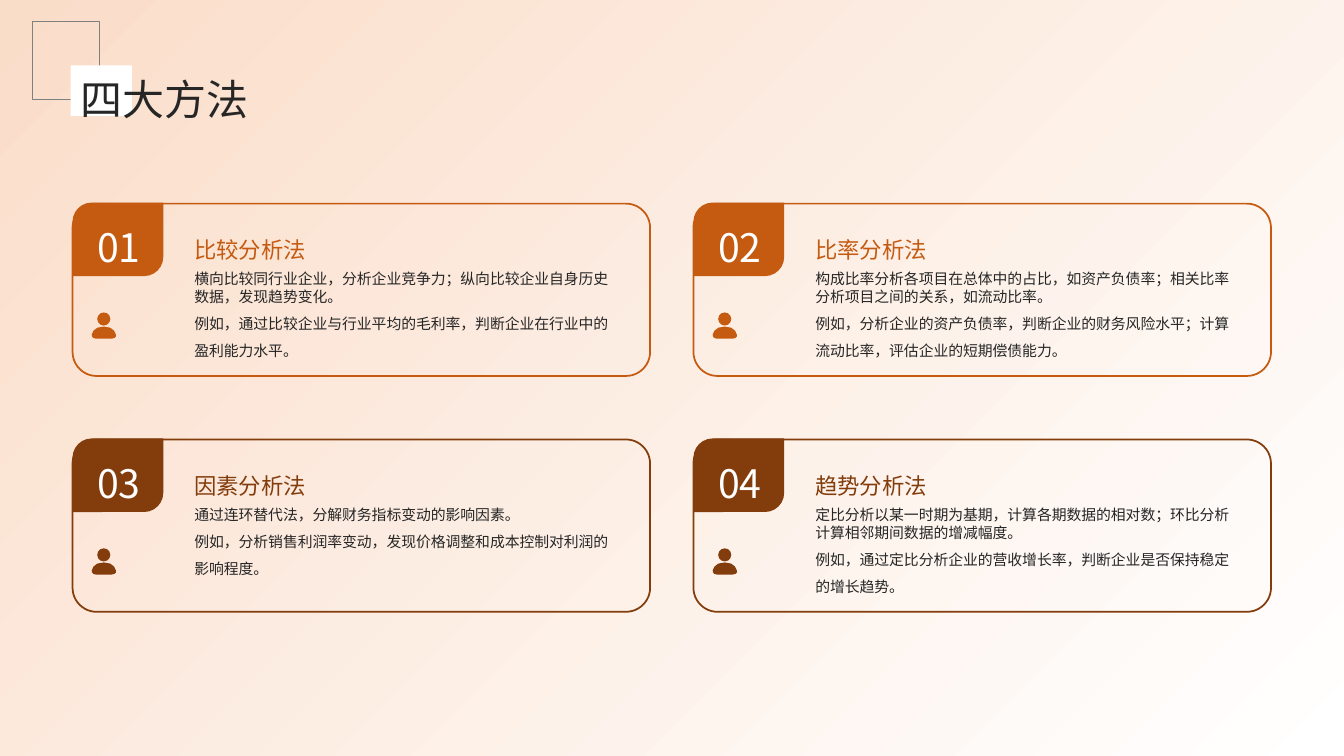
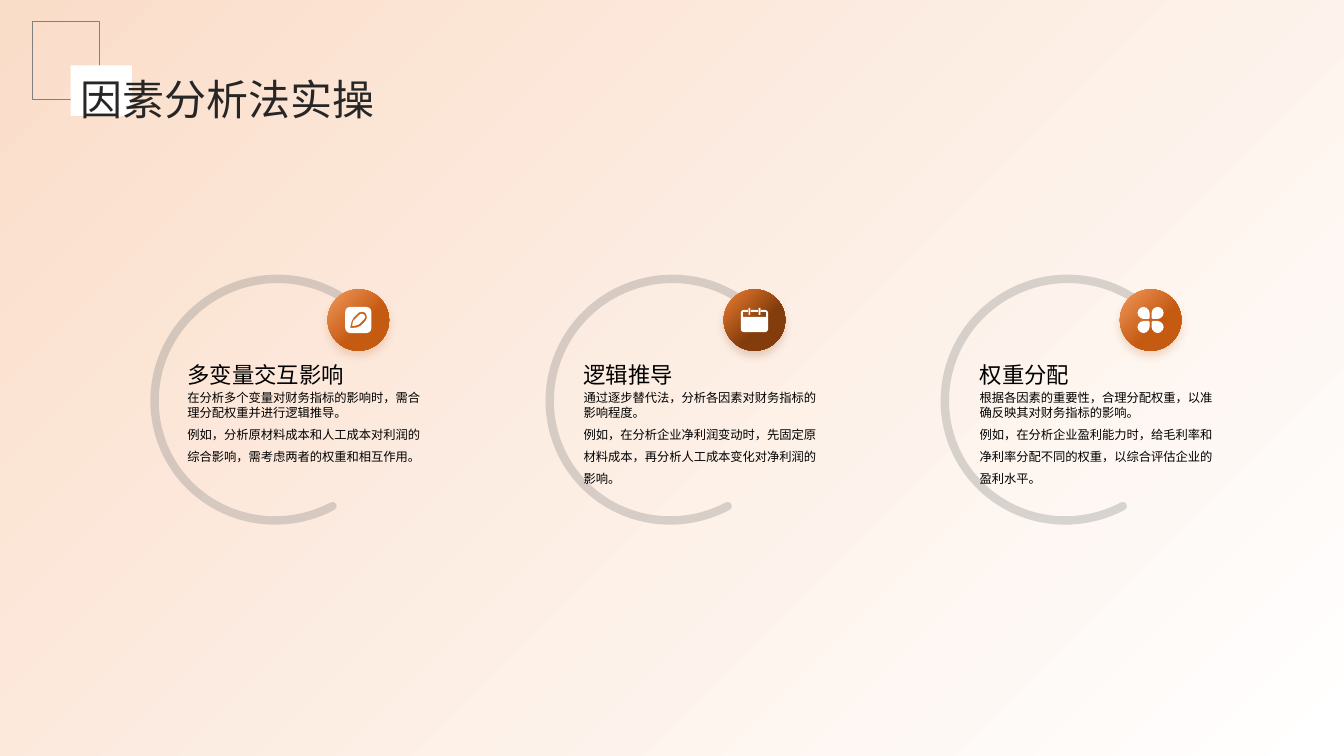
"""Build two slides on financial analysis methods: four method cards and three practice steps."""
from lxml.etree import SubElement
from pptx import Presentation
from pptx.dml.color import RGBColor
from pptx.enum.shapes import MSO_SHAPE
from pptx.enum.text import MSO_ANCHOR, MSO_AUTO_SIZE, PP_ALIGN
from pptx.oxml.ns import qn
from pptx.util import Pt

METHODS_TITLE = "四大方法"
METHODS = [
    ("比较分析法",
     "横向比较同行业企业，分析企业竞争力；纵向比较企业自身历史数据，发现趋势变化。",
     "例如，通过比较企业与行业平均的毛利率，判断企业在行业中的盈利能力水平。"),
    ("比率分析法",
     "构成比率分析各项目在总体中的占比，如资产负债率；相关比率分析项目之间的关系，如流动比率。",
     "例如，分析企业的资产负债率，判断企业的财务风险水平；计算流动比率，评估企业的短期偿债能力。"),
    ("因素分析法",
     "通过连环替代法，分解财务指标变动的影响因素。",
     "例如，分析销售利润率变动，发现价格调整和成本控制对利润的影响程度。"),
    ("趋势分析法",
     "定比分析以某一时期为基期，计算各期数据的相对数；环比分析计算相邻期间数据的增减幅度。",
     "例如，通过定比分析企业的营收增长率，判断企业是否保持稳定的增长趋势。"),
]
PRACTICE_TITLE = "因素分析法实操"
PRACTICE = [
    ("多变量交互影响", "pen", "orange",
     "在分析多个变量对财务指标的影响时，需合理分配权重并进行逻辑推导。",
     "例如，分析原材料成本和人工成本对利润的综合影响，需考虑两者的权重和相互作用。"),
    ("逻辑推导", "calendar", "brown",
     "通过逐步替代法，分析各因素对财务指标的影响程度。",
     "例如，在分析企业净利润变动时，先固定原材料成本，再分析人工成本变化对净利润的影响。"),
    ("权重分配", "clover", "orange",
     "根据各因素的重要性，合理分配权重，以准确反映其对财务指标的影响。",
     "例如，在分析企业盈利能力时，给毛利率和净利率分配不同的权重，以综合评估企业的盈利水平。"),
]

THEME = {
    "font": "Noto Sans CJK SC",
    "white": "FFFFFF", "peach": "FADDC9", "ink": "262626", "black": "000000", "gray": "808080",
    "orange": "C55A11", "brown": "833C0B", "orange_glow": "F1985C", "brown_glow": "EE7F33",
    "title": 30, "number": 28, "heading": 16, "card_body": 10.6, "step_body": 8.8,
}
PX = 9144
WIDTH, HEIGHT = 4000 / 3, 750
BODY_SPACING = (1.0, 1.5)
NO_INSETS = {"margin_left": 0, "margin_top": 0, "margin_right": 0, "margin_bottom": 0}


def px(length):
    return round(length * PX)


def color(name):
    return RGBColor.from_string(THEME[name])


def apply(target, values):
    for name, value in values.items():
        setattr(target, name, value)


def square(left, top, right, bottom):
    return [(left, top), (right, top), (right, bottom), (left, bottom)]


def rounded(left, top, right, bottom, radius):
    k = radius * 0.45
    return [(left + radius, top), (right - radius, top),
            (right - k, top, right, top + k, right, top + radius), (right, bottom - radius),
            (right, bottom - k, right - k, bottom, right - radius, bottom), (left + radius, bottom),
            (left + k, bottom, left, bottom - k, left, bottom - radius), (left, top + radius),
            (left, top + k, left + k, top, left + radius, top)]


def mirrored(outline, flip_x, flip_y, size=26):
    flips = (flip_x, flip_y)
    return [tuple(size - v if flips[i % 2] else v for i, v in enumerate(segment))
            for segment in outline]


PETAL = [(11, 12), (6, 12), (3, 12, 0, 9, 0, 6), (0, 3, 3, 0, 6, 0), (9, 0, 12, 3, 12, 6),
         (12, 11)]
ICONS = {
    "person": ((24, 26), [
        [(12, 14), (20, 14, 23, 18, 24, 22), (25, 24, 23, 26, 20, 26), (4, 26),
         (1, 26, 0, 24, 0, 22), (1, 18, 4, 14, 12, 14)],
        rounded(5.5, 0, 18.5, 13, 6.5)]),
    "pen": ((26, 26), [
        rounded(0, 0, 26, 26, 5),
        [(16, 5), (15, 5, 14, 5, 13, 6), (8, 11), (6, 13, 5, 21, 5, 21), (5, 21, 13, 21, 15, 19),
         (20, 14), (22, 12, 22, 8, 20, 6), (19, 5, 18, 5, 16, 5)],
        [(16, 7), (17, 7, 18, 7, 19, 8), (20, 9, 20, 11, 19, 12), (14, 17), (13, 18, 10, 19, 7, 19),
         (7, 16, 8, 13, 9, 13), (14, 8), (15, 7, 15, 7, 16, 7)]]),
    "calendar": ((27, 24), [
        rounded(0, 2, 27, 24, 3), square(2, 4, 25, 9),
        *[square(x, 2, x + 3, 4) for x in (7, 17)],
        *[square(x, 0, x + 1.6, 7) for x in (7.7, 17.7)]]),
    "clover": ((26, 26), [mirrored(PETAL, x, y) for y in (False, True) for x in (False, True)]),
}


def trace(outline, steps=3):
    points = [outline[0]]
    for segment in outline[1:]:
        if len(segment) == 2:
            points.append(segment)
            continue
        controls = [points[-1], segment[:2], segment[2:4], segment[4:]]
        for step in range(1, steps + 1):
            t = step / steps
            weights = ((1 - t) ** 3, 3 * t * (1 - t) ** 2, 3 * t * t * (1 - t), t ** 3)
            points.append(tuple(sum(w * c[axis] for w, c in zip(weights, controls))
                                for axis in (0, 1)))
    spots = [(px(x), px(y)) for x, y in points]
    distinct = [spot for before, spot in zip([None] + spots, spots) if spot != before]
    return distinct[:-1] if distinct[-1] == distinct[0] else distinct


def paint(part, fill=None, line=None, weight=1.0):
    part.shadow.inherit = False
    if fill:
        part.fill.solid()
        part.fill.fore_color.rgb = color(fill)
    else:
        part.fill.background()
    if line:
        part.line.color.rgb = color(line)
        part.line.width = Pt(weight)
    else:
        part.line.fill.background()
    return part


def add_preset(slide, kind, box, adjust=(), **style):
    part = slide.shapes.add_shape(kind, *map(px, box))
    for i, value in enumerate(adjust):
        part.adjustments[i] = value
    return paint(part, **style)


def grade(part, angle, *stops):
    part.fill.gradient()
    part.fill.gradient_angle = angle
    for stop, (position, name) in zip(part.fill.gradient_stops, stops):
        stop.position = position
        stop.color.rgb = color(name)


def add_icon(slide, name, left, top, fill):
    outlines = [trace(outline) for outline in ICONS[name][1]]
    builder = slide.shapes.build_freeform(*outlines[0][0], scale=1.0)
    for i, points in enumerate(outlines):
        if i:
            builder.move_to(*points[0])
        builder.add_line_segments(points[1:], close=True)
    paint(builder.convert_to_shape(px(left), px(top)), fill=fill)


def write(frame, lines, size, ink, spacing, align=PP_ALIGN.LEFT, **layout):
    apply(frame, {"word_wrap": True, "vertical_anchor": MSO_ANCHOR.TOP, **layout})
    for i, (line, gap) in enumerate(zip(lines, spacing)):
        paragraph = frame.add_paragraph() if i else frame.paragraphs[0]
        apply(paragraph, {"alignment": align, "line_spacing": gap})
        run = paragraph.add_run()
        run.text = line
        run.font.color.rgb = color(ink)
        apply(run.font, {"size": Pt(THEME[size]), "name": THEME["font"]})
        SubElement(run.font._element, qn("a:ea"), typeface=THEME["font"])


def add_text(slide, box, *args, **layout):
    write(slide.shapes.add_textbox(*map(px, box)).text_frame, *args, **layout)


def start_slide(deck):
    slide = deck.slides.add_slide(deck.slide_layouts[5])
    backdrop = add_preset(slide, MSO_SHAPE.RECTANGLE, (0, 0, WIDTH, HEIGHT))
    grade(backdrop, 135, (0, "white"), (1, "peach"))
    return slide


def finish_slide(slide, heading):
    add_preset(slide, MSO_SHAPE.RECTANGLE, (32, 21, 67, 78), line="gray", weight=0.75)
    add_preset(slide, MSO_SHAPE.RECTANGLE, (70, 65, 61, 50), fill="white")
    title = slide.shapes.title
    apply(title, dict(zip(("left", "top", "width", "height"), map(px, (80, 68, 1110, 46)))))
    write(title.text_frame, [heading], "title", "ink", [1.1],
          auto_size=MSO_AUTO_SIZE.SHAPE_TO_FIT_TEXT, **NO_INSETS)
    title._element.getparent().append(title._element)


def add_method(slide, index, heading, *body):
    row, column = divmod(index, 2)
    left, top = 72 + 616 * column, 202 + 234 * row
    accent = ("orange", "brown")[row]
    add_preset(slide, MSO_SHAPE.ROUNDED_RECTANGLE, (left, top, 573, 171), [0.14],
               line=accent, weight=1.25)
    add_text(slide, (left + 111, top + 10, 443, 54), [heading], "heading", accent, [1.3],
             vertical_anchor=MSO_ANCHOR.BOTTOM)
    add_text(slide, (left + 111, top + 61, 443, 102), body, "card_body", "ink", BODY_SPACING)
    add_preset(slide, MSO_SHAPE.ROUND_2_DIAG_RECTANGLE, (left, top - 1, 90, 73), [0.26, 0],
               fill=accent)
    add_text(slide, (left + 13, top + 10, 66, 57), [f"{index + 1:02}"], "number", "white", [1.1],
             align=PP_ALIGN.CENTER)
    add_icon(slide, "person", left + 19, top + 108, accent)


def add_ring(slide, left):
    ring = add_preset(slide, MSO_SHAPE.ARC, (left, 277, 242, 239), [162, 96.47],
                      line="gray", weight=6)
    ring.rotation = 152.1
    stroke = ring.line._ln
    stroke.set("cap", "rnd")
    SubElement(stroke.find(".//" + qn("a:srgbClr")), qn("a:alpha"), val="30000")


def add_medallion(slide, left, icon, accent):
    diameter, top = 61, 287
    medallion = add_preset(slide, MSO_SHAPE.OVAL, (left, top, diameter, diameter))
    grade(medallion, 315, (0, accent + "_glow"), (0.6, accent))
    effects = medallion._element.spPr.find(qn("a:effectLst"))
    glow = SubElement(effects, qn("a:outerShdw"), blurRad=str(Pt(6)), dist=str(Pt(4)),
                      dir="5400000", algn="t", rotWithShape="0")
    tint = SubElement(glow, qn("a:srgbClr"), val=THEME[accent])
    SubElement(tint, qn("a:alpha"), val="20000")
    width, height = ICONS[icon][0]
    add_icon(slide, icon, left + (diameter - width) / 2, top + (diameter - height) / 2, "white")


def add_step(slide, index, heading, icon, accent, *body):
    left = 186 + 393 * index
    add_ring(slide, 153 + 392 * index)
    add_medallion(slide, left + 139, icon, accent)
    add_text(slide, (left, 358, 243, 27), [heading], "heading", "black", [1.3],
             vertical_anchor=MSO_ANCHOR.BOTTOM, **NO_INSETS)
    add_text(slide, (left, 387, 243, 102), body, "step_body", "black", BODY_SPACING, **NO_INSETS)


def main():
    deck = Presentation()
    apply(deck, {"slide_width": px(WIDTH), "slide_height": px(HEIGHT)})
    for title, items, add_item in ((METHODS_TITLE, METHODS, add_method),
                                   (PRACTICE_TITLE, PRACTICE, add_step)):
        slide = start_slide(deck)
        for index, item in enumerate(items):
            add_item(slide, index, *item)
        finish_slide(slide, title)
    deck.save("out.pptx")


if __name__ == "__main__":
    main()
